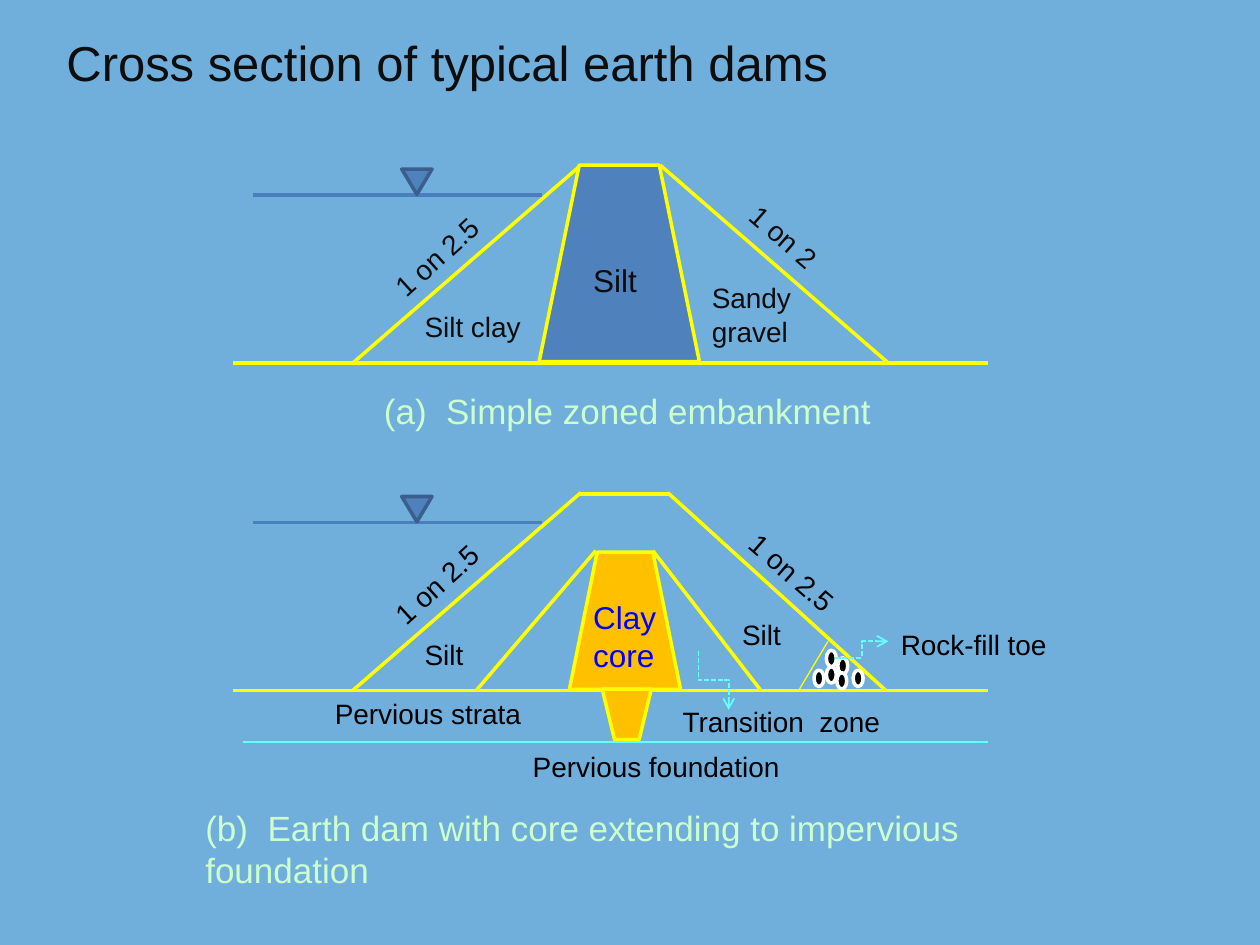
from dataclasses import dataclass

import lxml.etree
import pptx
import pptx.dml.color
import pptx.enum.dml
import pptx.enum.shapes
import pptx.enum.text
import pptx.oxml.ns
import pptx.util
from pptx.util import Cm

SHAPE = pptx.enum.shapes.MSO_SHAPE
CONNECTOR = pptx.enum.shapes.MSO_CONNECTOR


@dataclass(frozen=True)
class Theme:
    font: str = "Arial"
    background: str = "70AEDC"
    outline: str = "FFFF00"
    water: str = "4F81BD"
    water_line: str = "4B7EBC"
    water_edge: str = "3A5F8C"
    clay: str = "FFC000"
    clay_text: str = "0000FF"
    ink: str = "0D0D0D"
    black: str = "000000"
    white: str = "FFFFFF"
    caption: str = "CCFFCC"
    pointer: str = "66FFFF"
    title_size: int = 28
    caption_size: int = 20
    core_size: int = 18
    label_size: int = 16
    bold_line: float = 2
    pointer_line: float = 1
    thin_line: float = 0.75


@dataclass(frozen=True)
class Label:
    text: str
    left: float
    top: float
    width: float
    height: float = 0.94
    size: int = Theme.label_size
    color: str = Theme.black
    rotation: float = 0
    wrap: bool = True


@dataclass(frozen=True)
class Line:
    x1: float
    y1: float
    x2: float
    y2: float
    color: str = Theme.outline
    width: float = Theme.bold_line


@dataclass(frozen=True)
class Solid:
    kind: SHAPE
    left: float
    top: float
    width: float
    height: float
    fill: str
    edge: str = Theme.outline
    rotation: float = 0


def rgb(color: str) -> pptx.dml.color.RGBColor:
    return pptx.dml.color.RGBColor.from_string(color)


def draw_label(slide, label: Label) -> None:
    box = slide.shapes.add_textbox(
        Cm(label.left), Cm(label.top), Cm(label.width), Cm(label.height))
    box.rotation = label.rotation
    frame = box.text_frame
    frame.word_wrap = label.wrap
    frame.auto_size = pptx.enum.text.MSO_AUTO_SIZE.SHAPE_TO_FIT_TEXT
    frame.text = label.text
    for paragraph in frame.paragraphs:
        for run in paragraph.runs:
            run.font.name = Theme.font
            run.font.size = pptx.util.Pt(label.size)
            run.font.color.rgb = rgb(label.color)


def draw_line(slide, line: Line, kind: CONNECTOR = CONNECTOR.STRAIGHT):
    connector = slide.shapes.add_connector(
        kind, Cm(line.x1), Cm(line.y1), Cm(line.x2), Cm(line.y2))
    connector.line.color.rgb = rgb(line.color)
    connector.line.width = pptx.util.Pt(line.width)
    lxml.etree.SubElement(connector._element.spPr, pptx.oxml.ns.qn("a:effectLst"))
    return connector


def draw_pointer(slide, line: Line, rotation: int = 0) -> None:
    """Draw a dashed elbow arrow, turned about its centre by whole degrees."""
    pointer = draw_line(slide, line, CONNECTOR.ELBOW)
    pointer.line.dash_style = pptx.enum.dml.MSO_LINE.SQUARE_DOT
    properties = pointer._element.spPr
    properties.find(pptx.oxml.ns.qn("a:xfrm")).set("rot", str(rotation * 60000))
    outline = properties.find(pptx.oxml.ns.qn("a:ln"))
    lxml.etree.SubElement(outline, pptx.oxml.ns.qn("a:tailEnd"), type="arrow")


def draw_solid(slide, solid: Solid) -> None:
    shape = slide.shapes.add_shape(
        solid.kind, Cm(solid.left), Cm(solid.top), Cm(solid.width), Cm(solid.height))
    shape.rotation = solid.rotation
    shape.shadow.inherit = False
    shape.fill.solid()
    shape.fill.fore_color.rgb = rgb(solid.fill)
    shape.line.color.rgb = rgb(solid.edge)
    shape.line.width = pptx.util.Pt(Theme.bold_line)


def draw_embankment(slide, crest: float, ink: str) -> None:
    """Draw what both dams share: ground, upstream slope and water level."""
    ground = crest + 3.99
    water = crest + 0.6
    draw_line(slide, Line(4.7, ground, 19.91, ground))
    draw_line(slide, Line(11.71, crest, 7.11, ground))
    draw_line(slide, Line(10.92, water, 5.11, water, Theme.water_line))
    draw_solid(slide, Solid(SHAPE.FLOWCHART_MERGE, 8.1, crest + 0.08, 0.61, 0.51,
                            Theme.water, Theme.water_edge))
    draw_label(slide, Label("1 on 2.5", 7.42, crest + 1.09, 3.4,
                            color=ink, rotation=317.7))


def draw_zoned_dam(slide) -> None:
    crest = 3.33
    draw_embankment(slide, crest, Theme.ink)
    draw_solid(slide, Solid(SHAPE.TRAPEZOID, 10.87, crest, 3.23, 3.96, Theme.water))
    draw_line(slide, Line(13.31, crest, 17.91, crest + 3.99))
    for label in (
        Label("Silt", 11.71, 5.13, 1.6, 1.02, Theme.core_size, Theme.ink),
        Label("Silt clay", 8.31, 6.12, 2.79, color=Theme.ink),
        Label("1 on 2", 14.71, 4.45, 2.51, color=Theme.ink, rotation=41),
        Label("Sandy\ngravel", 14.1, 5.54, 2.21, 1.63, color=Theme.ink),
    ):
        draw_label(slide, label)


def draw_core_dam(slide) -> None:
    crest, ground, core_top = 9.93, 13.92, 11.1
    draw_embankment(slide, crest, Theme.black)
    draw_solid(slide, Solid(SHAPE.TRAPEZOID, 11.48, 11.13, 2.24, 2.77, Theme.clay))
    draw_solid(slide, Solid(SHAPE.TRAPEZOID, 12.14, 13.89, 0.99, 1.02,
                            Theme.clay, rotation=180))
    for line in (
        Line(13.46, crest, 17.86, ground),
        Line(11.68, 9.96, 13.49, 9.96),
        Line(12.01, core_top, 9.6, ground),
        Line(13.16, core_top, 15.34, ground),
        Line(16.69, 12.93, 16.1, ground, width=Theme.thin_line),
        Line(19.91, 14.96, 4.9, 14.96, Theme.pointer, Theme.thin_line),
    ):
        draw_line(slide, line)
    rocks = ((16.89, 13.26), (16.66, 13.44), (16.87, 13.56),
             (16.41, 13.51), (16.66, 13.11), (17.2, 13.51))
    for left, top in rocks:
        draw_solid(slide, Solid(SHAPE.OVAL, left, top, 0.2, 0.33,
                                Theme.black, Theme.white))
    draw_pointer(slide, Line(14.98, 13.41, 13.79, 14.02,
                             Theme.pointer, Theme.pointer_line), rotation=270)
    draw_pointer(slide, Line(16.84, 13.26, 17.91, 12.93,
                             Theme.pointer, Theme.pointer_line))
    for label in (
        Label("Clay core", 11.71, 11.94, 2.21, 1.8, Theme.core_size, Theme.clay_text),
        Label("Silt", 8.31, 12.73, 1.4),
        Label("Silt", 14.71, 12.32, 1.4),
        Label("1 on 2.5", 14.63, 11.25, 3.07, rotation=41),
        Label("Transition  zone", 13.51, 14.07, 4.6),
        Label("Pervious strata", 6.5, 13.92, 4.6),
        Label("Pervious foundation", 10.49, 14.99, 5.79),
        Label("Rock-fill toe", 17.91, 12.52, 3.61),
    ):
        draw_label(slide, label)


def main() -> None:
    presentation = pptx.Presentation()
    presentation.slide_width, presentation.slide_height = Cm(25.4), Cm(19.05)
    slide = presentation.slides.add_slide(presentation.slide_layouts[6])
    slide.background.fill.solid()
    slide.background.fill.fore_color.rgb = rgb(Theme.background)

    draw_zoned_dam(slide)
    draw_core_dam(slide)
    for heading in (
        Label("(a)  Simple zoned embankment", 7.49, 7.72, 11, 1.12,
              Theme.caption_size, Theme.caption),
        Label("(b)  Earth dam with core extending to impervious foundation",
              3.89, 16.13, 19.2, 1.12, Theme.caption_size, Theme.caption),
        Label("Cross section of typical earth dams", 1.09, 0.53, 16.03, 1.45,
              Theme.title_size, Theme.ink, wrap=False),
    ):
        draw_label(slide, heading)
    presentation.save("out.pptx")


if __name__ == "__main__":
    main()
